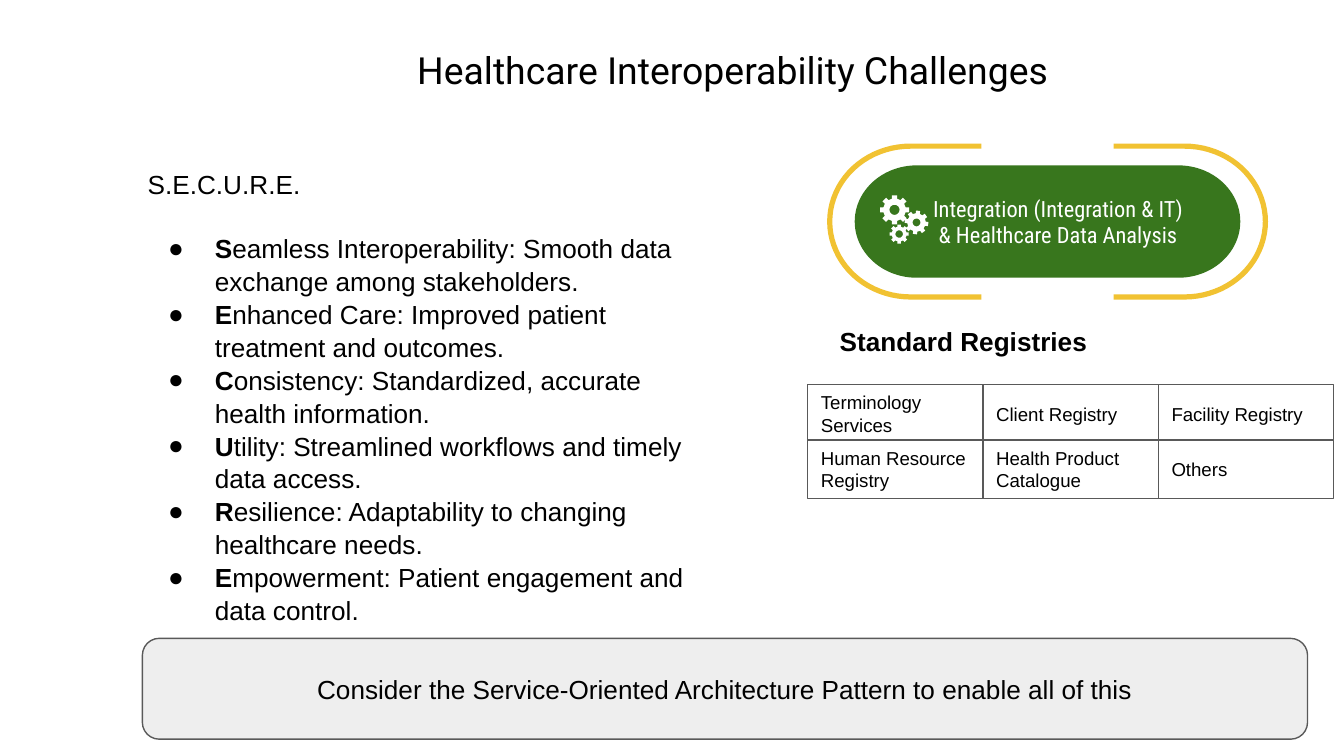
import math

import pptx
import pptx.dml.color
import pptx.enum.shapes
import pptx.enum.text
import pptx.util
from lxml import etree

Pt = pptx.util.Pt
SHAPE = pptx.enum.shapes.MSO_SHAPE
ANCHOR = pptx.enum.text.MSO_ANCHOR
ALIGN = pptx.enum.text.PP_ALIGN


def rgb(value):
    return pptx.dml.color.RGBColor.from_string(value)


def arc(cx, cy, rx, ry, start, end, steps=40):
    """Points on an ellipse between two angles in degrees."""
    angles = [math.radians(start + (end - start) * i / steps) for i in range(steps + 1)]
    return [(cx + rx * math.cos(a), cy + ry * math.sin(a)) for a in angles]


class Deck:
    black, white = "000000", "FFFFFF"
    green, gold = "38761D", "F1C232"
    grey, edge = "EEEEEE", "595959"
    inset = 7.2

    def __init__(self, width, height):
        self.prs = pptx.Presentation()
        self.prs.slide_width, self.prs.slide_height = Pt(width), Pt(height)
        self.s = self.prs.slides.add_slide(self.prs.slide_layouts[6])

    def frame(self, sp, anchor=ANCHOR.MIDDLE, left=inset):
        tf = sp.text_frame
        tf.word_wrap = True
        tf.vertical_anchor = anchor
        tf.margin_left = Pt(left)
        tf.margin_right = tf.margin_top = tf.margin_bottom = Pt(self.inset)
        return tf

    def run(self, p, text, size, font="Arial", color=black, bold=False):
        r = p.add_run()
        r.text = text
        r.font.size = Pt(size)
        r.font.name = font
        r.font.bold = bold
        r.font.color.rgb = rgb(color)

    def paint(self, sp, fill, line=None):
        sp.shadow.inherit = False
        sp.fill.solid()
        sp.fill.fore_color.rgb = rgb(fill)
        if line:
            sp.line.color.rgb = rgb(line)
            sp.line.width = Pt(0.75)
        else:
            sp.line.fill.background()

    def text_box(self, x, y, w, h):
        sp = self.s.shapes.add_textbox(Pt(x), Pt(y), Pt(w), Pt(h))
        return self.frame(sp, ANCHOR.TOP)

    def label(self, x, y, w, h, text, size, align=ALIGN.LEFT, **style):
        p = self.text_box(x, y, w, h).paragraphs[0]
        p.alignment = align
        self.run(p, text, size, **style)

    def box(self, kind, x, y, w, h, lines, size, fill, line=None,
            align=ALIGN.CENTER, left=inset, **style):
        sp = self.s.shapes.add_shape(kind, Pt(x), Pt(y), Pt(w), Pt(h))
        self.paint(sp, fill, line)
        tf = self.frame(sp, left=left)
        for i, text in enumerate(lines):
            p = tf.add_paragraph() if i else tf.paragraphs[0]
            p.alignment = align
            self.run(p, text, size, **style)

    def bullet(self, p, hanging, indent):
        """Turn a paragraph into a bullet item with a hanging indent."""
        pPr = p._p.get_or_add_pPr()
        pPr.set("marL", str(Pt(indent)))
        pPr.set("indent", str(-Pt(hanging)))
        ns = pPr.nsmap["a"]
        color = etree.SubElement(pPr, f"{{{ns}}}buClr")
        etree.SubElement(color, f"{{{ns}}}srgbClr", val=self.black)
        etree.SubElement(pPr, f"{{{ns}}}buFont", typeface="Arial")
        etree.SubElement(pPr, f"{{{ns}}}buChar", char="●")

    def outline(self, contours, fill):
        """Filled freeform; later contours cut holes in the first."""
        contours = [[(Pt(x), Pt(y)) for x, y in points] for points in contours]
        builder = self.s.shapes.build_freeform(*contours[0][0], scale=1.0)
        for i, points in enumerate(contours):
            if i:
                builder.move_to(*points[0])
            builder.add_line_segments(points[1:], close=True)
        self.paint(builder.convert_to_shape(), fill)

    def bracket(self, cx, cy, side, thickness=2.8):
        """Half of the ring round the pill: side is -1 for left, 1 for right."""
        gap, offset, rx, ry = 35.4, 73.4, 44.7, 41.8
        outer = arc(offset, 0, rx, ry, -90, 90)
        inner = arc(offset, 0, rx - thickness, ry - thickness, 90, -90)
        points = ([(gap, -ry)] + outer + [(gap, ry), (gap, ry - thickness)]
                  + inner + [(gap, thickness - ry)])
        self.outline([[(cx + side * x, cy + y) for x, y in points]], self.gold)

    def gear(self, cx, cy, radius, hole, turn, teeth=8):
        rim = []
        for i in range(teeth):
            for spread, reach in ((-13, 0.77), (-10, 1), (10, 1), (13, 0.77)):
                a = math.radians(turn + 360 / teeth * i + spread)
                rim.append((cx + radius * reach * math.cos(a),
                            cy + radius * reach * math.sin(a)))
        self.outline([rim, arc(cx, cy, hole, hole, 360, 0)], self.white)


def main():
    d = Deck(720, 405)
    d.label(80.6, 18, 624.2, 38.9, "Healthcare Interoperability Challenges", 20,
            ALIGN.CENTER, font="Roboto")

    pill_x, pill_y, pill_w, pill_h = 457.9, 88.6, 206.6, 60.2
    cx, cy = pill_x + pill_w / 2, pill_y + pill_h / 2
    d.box(SHAPE.FLOWCHART_TERMINATOR, pill_x, pill_y, pill_w, pill_h,
          ["Integration (Integration & IT)", "& Healthcare Data Analysis"], 12,
          d.green, left=18.4, font="Roboto Condensed", color=d.white)
    for side in (-1, 1):
        d.bracket(cx, cy, side)
    for gear in ((479.2, 112.4, 7.9, 2.7, 0), (491, 119.2, 6.4, 2.1, 8),
                 (481.7, 125.4, 5.2, 2, 0)):
        d.gear(*gear)

    d.label(442.8, 167, 259.2, 31.7, "Standard Registries", 14, bold=True)
    registries = (("Terminology Services", "Client Registry", "Facility Registry"),
                  ("Human Resource Registry", "Health Product Catalogue", "Others"))
    for row, names in enumerate(registries):
        for col, name in enumerate(names):
            d.box(SHAPE.RECTANGLE, 432.7 + 93.9 * col, 205.9 + 29.8 * row, 93.9, 31.4,
                  [name], 10, d.white, d.edge, ALIGN.LEFT)

    tf = d.text_box(72, 82.1, 313.2, 252)
    p = tf.paragraphs[0]
    p.line_spacing = 1.05
    d.run(p, "S.E.C.U.R.E.", 14)
    principles = (
        "Seamless Interoperability: Smooth data exchange among stakeholders.",
        "Enhanced Care: Improved patient treatment and outcomes.",
        "Consistency: Standardized, accurate health information.",
        "Utility: Streamlined workflows and timely data access.",
        "Resilience: Adaptability to changing healthcare needs.",
        "Empowerment: Patient engagement and data control.",
    )
    for i, text in enumerate(principles):
        p = tf.add_paragraph()
        d.bullet(p, 25, 36)
        p.line_spacing = 1.05
        p.space_before = Pt(0 if i else 16.8)
        d.run(p, text[0], 14, bold=True)
        d.run(p, text[1:], 14)

    d.box(SHAPE.ROUNDED_RECTANGLE, 76.3, 342, 624.2, 54,
          ["Consider the Service-Oriented Architecture Pattern to enable all of this"],
          14, d.grey, d.edge)
    d.prs.save("out.pptx")


if __name__ == "__main__":
    main()
